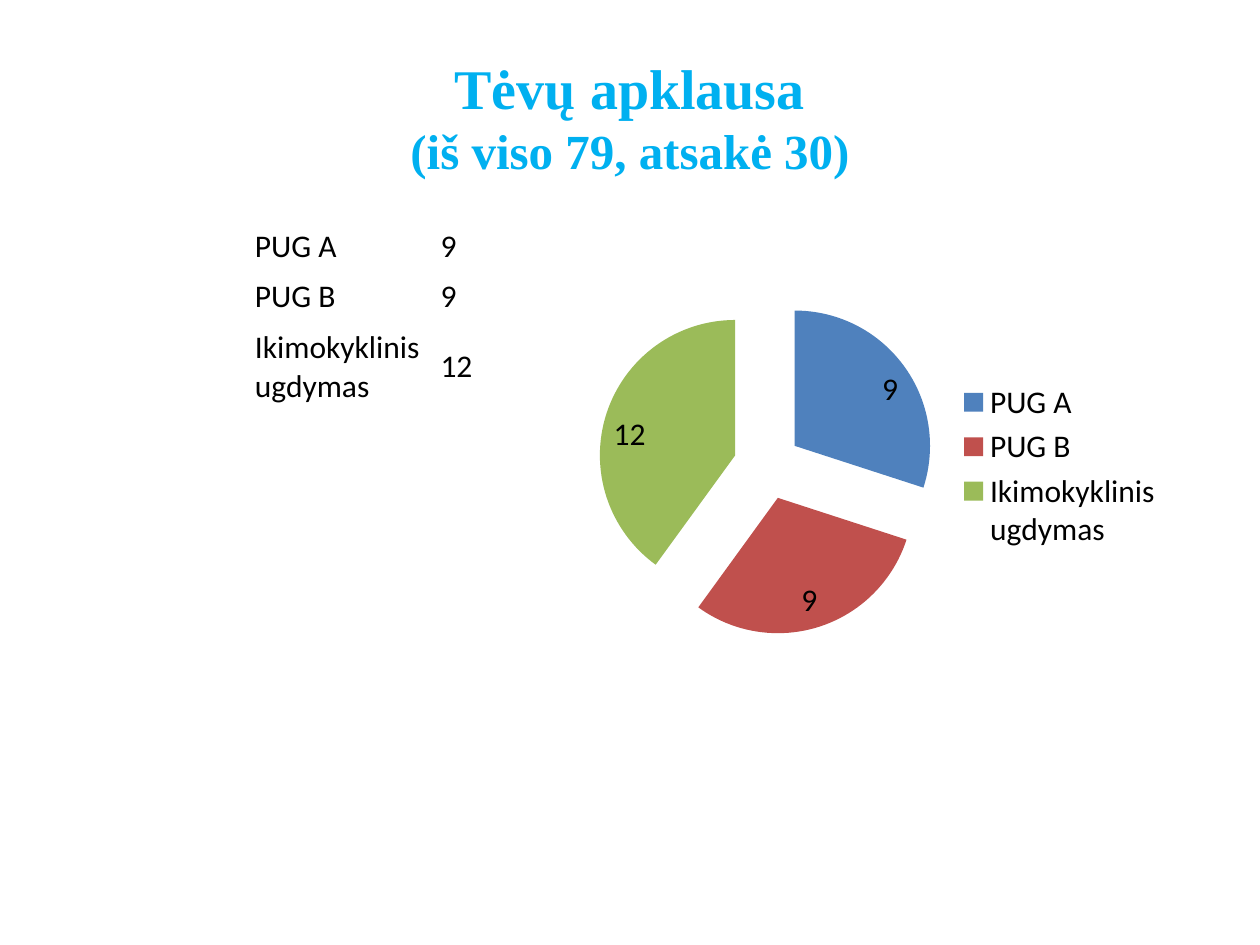
from typing import NamedTuple

from lxml.etree import Element
from pptx import Presentation
from pptx.chart.chart import Chart
from pptx.chart.data import CategoryChartData
from pptx.dml.color import RGBColor
from pptx.enum.chart import XL_CHART_TYPE, XL_LABEL_POSITION, XL_LEGEND_POSITION
from pptx.enum.text import MSO_ANCHOR, PP_ALIGN
from pptx.oxml.ns import qn
from pptx.slide import Slide
from pptx.table import _Cell
from pptx.util import Cm, Pt

SKY = RGBColor(0x00, 0xB0, 0xF0)
BLUE = RGBColor(0x4F, 0x81, 0xBD)
RED = RGBColor(0xC0, 0x50, 0x4D)
GREEN = RGBColor(0x9B, 0xBB, 0x59)
BLACK = RGBColor(0x00, 0x00, 0x00)
WHITE = RGBColor(0xFF, 0xFF, 0xFF)


class Group(NamedTuple):
    name: str
    count: int
    color: RGBColor


GROUPS = [
    Group("PUG A", 9, BLUE),
    Group("PUG B", 9, RED),
    Group("Ikimokyklinis ugdymas", 12, GREEN),
]
ROW_HEIGHTS = [Cm(1), Cm(1), Cm(1.75)]


def style_font(font, name: str, size: int, color: RGBColor) -> None:
    font.name = name
    font.size = Pt(size)
    font.color.rgb = color


def add_title(slide: Slide) -> None:
    box = slide.shapes.add_textbox(Cm(1.27), Cm(0.76), Cm(22.86), Cm(3.18))
    frame = box.text_frame
    frame.word_wrap = True
    frame.vertical_anchor = MSO_ANCHOR.MIDDLE
    line = frame.paragraphs[0]
    line.text = "Tėvų apklausa\v(iš viso 79, atsakė 30)"
    line.alignment = PP_ALIGN.CENTER
    for run, size in zip(line.runs, (32, 28)):
        style_font(run.font, "Times New Roman", size, SKY)
        run.font.bold = True


def fill_cell(cell: _Cell, text: str) -> None:
    cell.fill.solid()
    cell.fill.fore_color.rgb = WHITE
    cell.vertical_anchor = MSO_ANCHOR.MIDDLE
    cell.margin_left = cell.margin_right = Cm(0.13)
    cell.margin_top = cell.margin_bottom = Cm(0.13)
    cell.text_frame.text = text
    style_font(cell.text_frame.paragraphs[0].font, "Calibri", 18, BLACK)
    for run in cell.text_frame.paragraphs[0].runs:
        style_font(run.font, "Calibri", 18, BLACK)


def add_counts(slide: Slide) -> None:
    table = slide.shapes.add_table(
        len(GROUPS), 3, Cm(1.27), Cm(4.45), Cm(11.22), sum(ROW_HEIGHTS)
    ).table
    table.first_row = False
    table.horz_banding = False
    for row, height, group in zip(table.rows, ROW_HEIGHTS, GROUPS):
        row.height = height
        for cell, text in zip(row.cells, ("", group.name, str(group.count))):
            fill_cell(cell, text)


def explode(chart: Chart, percent: int) -> None:
    """Pull all slices away from the centre of the pie."""
    tag = Element(qn("c:explosion"), val=str(percent))
    series = chart.plots[0].series[0]
    series._element.find(qn("c:dPt")).addprevious(tag)


def add_pie(slide: Slide) -> None:
    data = CategoryChartData()
    data.categories = [group.name for group in GROUPS]
    data.add_series("Series 1", [group.count for group in GROUPS])
    chart = slide.shapes.add_chart(
        XL_CHART_TYPE.PIE, Cm(11.71), Cm(4.45), Cm(11.99), Cm(9.88), data
    ).chart
    style_font(chart.font, "Calibri", 18, BLACK)
    chart.has_title = False
    chart.has_legend = True
    chart.legend.position = XL_LEGEND_POSITION.RIGHT
    chart.legend.include_in_layout = False

    plot = chart.plots[0]
    plot.vary_by_categories = True
    for index, group in enumerate(GROUPS):
        fill = plot.series[0].points[index].format.fill
        fill.solid()
        fill.fore_color.rgb = group.color
    explode(chart, 25)

    plot.has_data_labels = True
    labels = plot.data_labels
    labels.show_value = True
    labels.show_percentage = False
    labels.position = XL_LABEL_POSITION.INSIDE_END
    style_font(labels.font, "Calibri", 18, BLACK)


def main() -> None:
    deck = Presentation()
    deck.slide_width = Cm(25.4)
    deck.slide_height = Cm(19.05)
    slide = deck.slides.add_slide(deck.slide_layouts[6])
    add_title(slide)
    add_counts(slide)
    add_pie(slide)
    deck.save("out.pptx")


if __name__ == "__main__":
    main()
